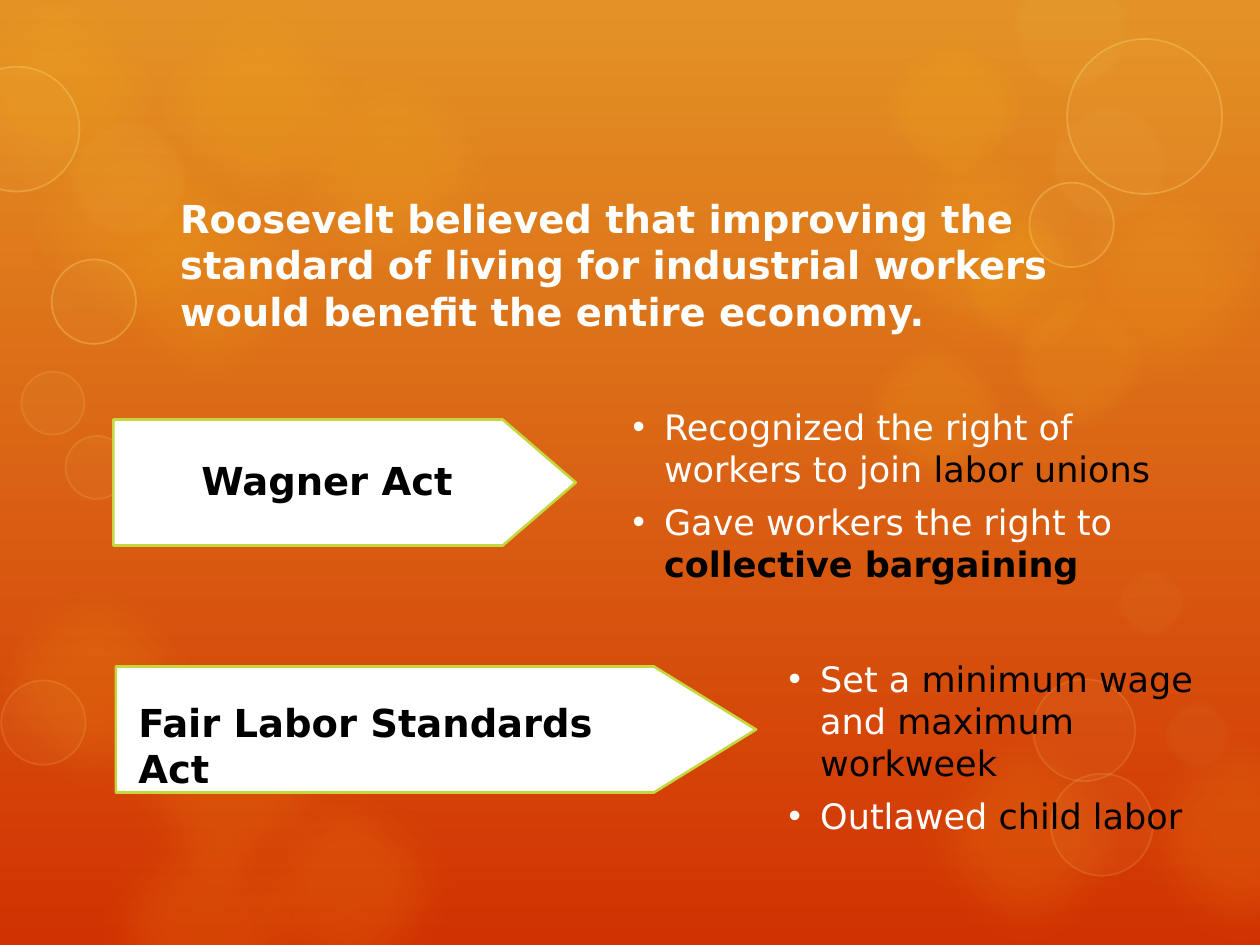
from lxml import etree
from pptx import Presentation
from pptx import util as u
from pptx.dml.color import RGBColor
from pptx.enum import shapes, text
from pptx.oxml import ns

THEME = {
    "top": "E39325", "base": "D13202", "gold": "FDC61B", "pale": "FFE281",
    "light": "FFFFFF", "dark": "000000", "edge": "C4D73F",
    "font": "DejaVu Sans", "head": 22, "body": 20,
}

deck = Presentation()
deck.slide_width, deck.slide_height = u.Inches(10), u.Inches(7.5)
cell = deck.slide_width / 10  # square grid: 10 columns by 7.5 rows
slide = deck.slides.add_slide(deck.slide_layouts[3])
title, *lists = slide.placeholders


def grid(*cells):
    return [round(n * cell) for n in cells]


def write(box, paras, size):
    """Fill box with paragraphs, each a list of (text, colour key, bold)."""
    frame = box.text_frame
    look = {"word_wrap": True, "auto_size": text.MSO_AUTO_SIZE.NONE,
            "vertical_anchor": text.MSO_ANCHOR.TOP}
    for key, value in look.items():
        setattr(frame, key, value)
    for i, runs in enumerate(paras):
        para = frame.add_paragraph() if i else frame.paragraphs[0]
        para.alignment = text.PP_ALIGN.LEFT
        para.space_before = u.Pt(0)
        for words, tone, bold in runs:
            run = para.add_run()
            run.text = words
            font = {"name": THEME["font"], "size": u.Pt(THEME[size]), "bold": bold}
            for key, value in font.items():
                setattr(run.font, key, value)
            run.font.color.rgb = RGBColor.from_string(THEME[tone])


# Background
back = slide.background.fill
back.gradient()
back.gradient_angle = 270
for stop, tone in zip(back.gradient_stops, ("top", "base")):
    stop.color.rgb = RGBColor.from_string(THEME[tone])

# Bokeh: colour, fill opacity, soft edge, diameter, corners of the circles
bokeh = [
    ("gold", 13, 25, 2.09, [
        (-0.3, 4.4), (0.6, 1.2), (2.05, 0.3), (0.6, 6.3), (-0.6, -0.3),
        (1, -0.2), (0, 0.7), (8.2, 1.2), (8.8, 5.6), (6.7, 0.9),
        (7.1, 5.6), (0.8, 5.2), (1.7, 6)]),
    ("gold", 12, 12, 1.33, [(7.5, 1.6), (6.75, 2.6), (7.9, 2.2), (6.9, 0.2)]),
    ("pale", 5, 4, 1, [(0.52, 0.92), (8.3, 0.8), (8, -0.25)]),
    ("pale", 5, 4, 0.61, [(8.83, 4.48), (9.2, 5.53)]),
    ("pale", 5, 0, 1.23, [(8.47, 0.31)]),
    ("pale", 5, 0, 0.99, [(-0.36, 0.53)]),
    ("pale", 5, 0, 0.81, [(8.34, 6.14), (8.2, 5.39)]),
    ("pale", 5, 0, 0.67, [(0.41, 2.06), (8.17, 1.45), (0.01, 5.4)]),
    ("pale", 5, 0, 0.5, [(0.17, 2.95), (0.52, 3.46)]),
]
for tone, veil, soft, size, spots in bokeh:
    for left, top in spots:
        dot = slide.shapes.add_shape(shapes.MSO_SHAPE.OVAL, *grid(left, top, size, size))
        dot.shadow.inherit = False
        dot.fill.solid()
        dot.fill.fore_color.rgb = RGBColor.from_string(THEME[tone])
        if tone == "pale":
            dot.line.width = u.Pt(1)
            dot.line.color.rgb = RGBColor.from_string(THEME[tone])
        else:
            dot.line.fill.background()
        rim = 30 if top < 2.5 else 15
        props = dot._element.spPr
        for paint, share in zip(props.iter(ns.qn("a:srgbClr")), (veil, rim)):
            etree.SubElement(paint, ns.qn("a:alpha"), val=str(share * 1000))
        if soft:
            effects = props.find(ns.qn("a:effectLst"))
            etree.SubElement(effects, ns.qn("a:softEdge"), rad=str(u.Pt(soft)))

# Title, brought in front of the bokeh with the lists
for holder in (title, *lists):
    slide.shapes._spTree.append(holder._element)
title.left, title.top, title.width, title.height = grid(1.33, 1.5, 7.17, 1.21)
write(title, [[("Roosevelt believed that improving the standard of living for "
                "industrial workers would benefit the entire economy.", "light", True)]], "head")

# Acts: arrow place, tip share, label place, label
acts = [
    ((0.9, 3.33, 3.67, 1), 0.58, (1.5, 3.58, 2.3, 0.47), "Wagner Act"),
    ((0.92, 5.29, 5.08, 1), 0.81, (1, 5.5, 4.4, 0.84), "Fair Labor Standards Act"),
]
for place, tip, spot, name in acts:
    arrow = slide.shapes.add_shape(shapes.MSO_SHAPE.PENTAGON, *grid(*place))
    arrow.shadow.inherit = False
    arrow.adjustments[0] = tip
    arrow.fill.solid()
    arrow.fill.fore_color.rgb = RGBColor.from_string(THEME["light"])
    arrow.line.color.rgb = RGBColor.from_string(THEME["edge"])
    arrow.line.width = u.Pt(1.5)
    write(slide.shapes.add_textbox(*grid(*spot)), [[(name, "dark", True)]], "head")

# What each act did
points = [
    ((4.92, 3.17, 4.6, 1.53), [
        [("Recognized the right of workers to join ", "light", False),
         ("labor unions", "dark", False)],
        [("Gave workers the right to ", "light", False),
         ("collective bargaining", "dark", True)]]),
    ((6.16, 5.17, 3.42, 1.53), [
        [("Set a ", "light", False), ("minimum wage ", "dark", False),
         ("and ", "light", False), ("maximum workweek", "dark", False)],
        [("Outlawed ", "light", False), ("child labor", "dark", False)]]),
]
for holder, (place, paras) in zip(lists, points):
    holder.left, holder.top, holder.width, holder.height = grid(*place)
    write(holder, paras, "body")
    for para in holder.text_frame.paragraphs:
        para.space_after = u.Pt(6)
        props = para._p.get_or_add_pPr()
        props.set("marL", str(u.Inches(0.25)))
        props.set("indent", str(-u.Inches(0.25)))
        etree.SubElement(props, ns.qn("a:buChar"), char="•")

deck.save("out.pptx")
